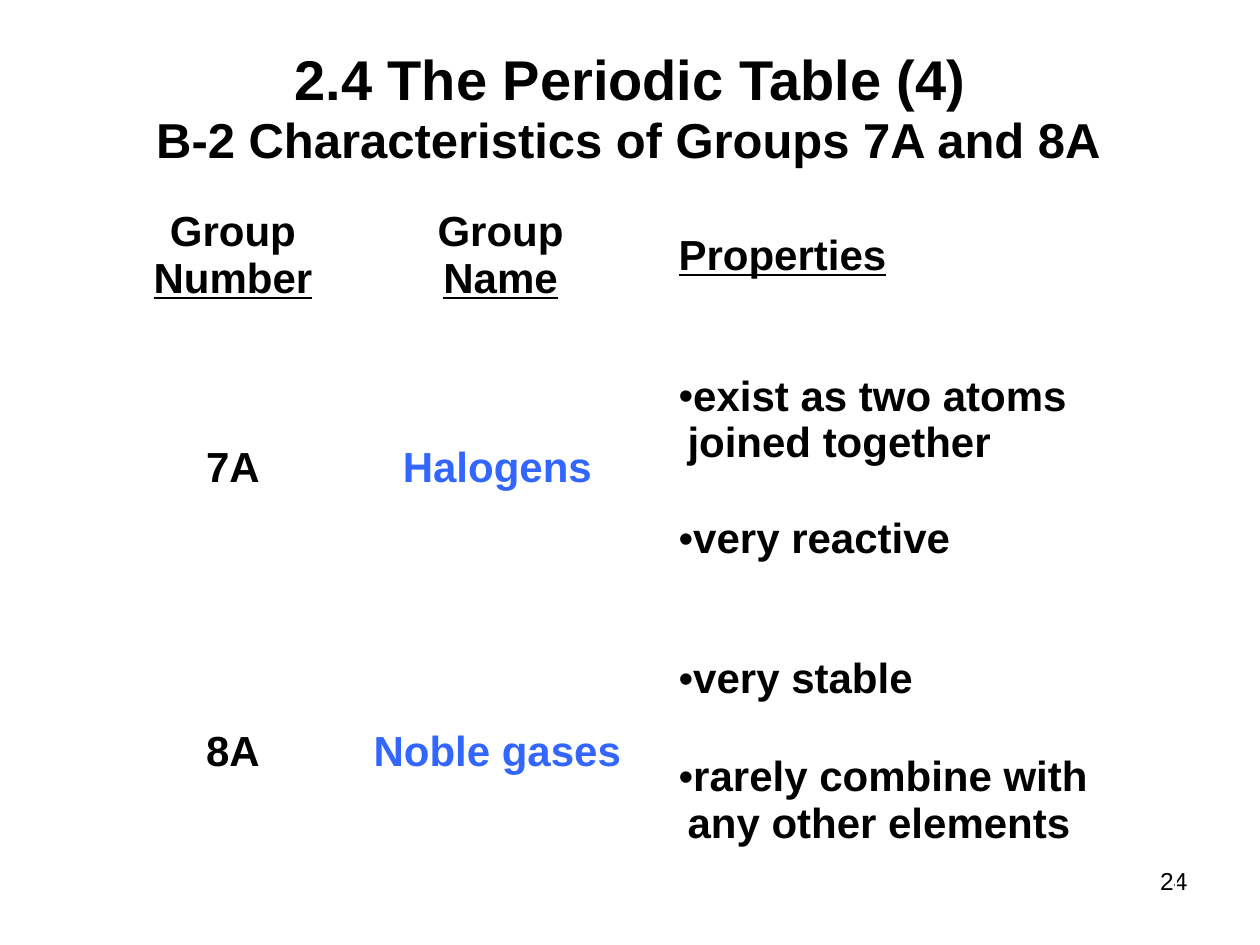
from dataclasses import dataclass

from lxml.etree import SubElement
from pptx import Presentation
from pptx.dml.color import RGBColor
from pptx.enum.text import MSO_ANCHOR, PP_ALIGN
from pptx.oxml.ns import qn
from pptx.util import Cm, Pt


@dataclass(frozen=True)
class Theme:
    font: str = "Arial"
    ink: RGBColor = RGBColor(0x00, 0x00, 0x00)
    accent: RGBColor = RGBColor(0x33, 0x66, 0xFF)
    title: Pt = Pt(32)
    subtitle: Pt = Pt(28)
    table: Pt = Pt(24)
    page: Pt = Pt(14)


THEME = Theme()
COLUMN_WIDTHS = (Cm(4.67), Cm(5.99), Cm(10.69))
ROW_HEIGHTS = (Cm(2.85), Cm(5.7), Cm(5.74))
SIDE_MARGIN = Cm(0.18)
PROPERTY_MARGIN = Cm(0.66)
HANGING_INDENT = Cm(0.18)

HEADINGS = (("Group ", "Number"), ("Group ", "Name"), ("", "Properties"))
GROUPS = (
    ("7A", "Halogens", ("exist as two atoms joined together", "very reactive"), Pt(28)),
    ("8A", "Noble gases", ("very stable", "rarely combine with any other elements"), Pt(29)),
)


def apply_format(target, values):
    for name, value in values.items():
        setattr(target, name, value)


def add_run(paragraph, text, size, color=THEME.ink, bold=True, underline=False):
    run = paragraph.add_run()
    run.text = text
    apply_format(run.font, {"name": THEME.font, "size": size, "bold": bold, "underline": underline})
    run.font.color.rgb = color


def add_label(slide, text, box, size, align, bold=True):
    frame = slide.shapes.add_textbox(*box).text_frame
    apply_format(frame, {"word_wrap": True, "vertical_anchor": MSO_ANCHOR.MIDDLE})
    paragraph = frame.paragraphs[0]
    paragraph.alignment = align
    add_run(paragraph, text, size, bold=bold)


def add_bullet(paragraph):
    properties = paragraph._p.get_or_add_pPr()
    properties.set("marL", str(HANGING_INDENT))
    properties.set("indent", str(-HANGING_INDENT))
    SubElement(properties, qn("a:buFont"), typeface=THEME.font)
    SubElement(properties, qn("a:buChar"), char="•")


def format_cell(cell, left=SIDE_MARGIN, right=SIDE_MARGIN):
    cell.fill.background()
    apply_format(cell, {
        "vertical_anchor": MSO_ANCHOR.MIDDLE,
        "margin_left": left,
        "margin_right": right,
        "margin_top": Cm(0.13),
        "margin_bottom": Cm(0.13),
    })


def fill_heading(cell, plain, underlined, align):
    paragraph = cell.text_frame.paragraphs[0]
    paragraph.alignment = align
    if plain:
        add_run(paragraph, plain, THEME.table)
    add_run(paragraph, underlined, THEME.table, underline=True)


def fill_centered(cell, text, color):
    paragraph = cell.text_frame.paragraphs[0]
    paragraph.alignment = PP_ALIGN.CENTER
    add_run(paragraph, text, THEME.table, color)


def fill_properties(cell, properties, gap):
    frame = cell.text_frame
    for index, text in enumerate(properties):
        paragraph = frame.add_paragraph() if index else frame.paragraphs[0]
        if index < len(properties) - 1:
            paragraph.space_after = gap
        add_bullet(paragraph)
        add_run(paragraph, text, THEME.table)


def add_group_table(slide):
    table = slide.shapes.add_table(
        len(ROW_HEIGHTS), len(COLUMN_WIDTHS), Cm(2.36), Cm(3.73),
        sum(COLUMN_WIDTHS), sum(ROW_HEIGHTS)).table
    apply_format(table, {"first_row": False, "horz_banding": False})
    for column, width in zip(table.columns, COLUMN_WIDTHS):
        column.width = width
    for row, height in zip(table.rows, ROW_HEIGHTS):
        row.height = height
        for cell in row.cells:
            format_cell(cell)
        format_cell(row.cells[2], left=PROPERTY_MARGIN)
    format_cell(table.cell(0, 1), left=Cm(0.64), right=Cm(0.51))

    alignments = (PP_ALIGN.CENTER, PP_ALIGN.CENTER, PP_ALIGN.LEFT)
    for column, (heading, align) in enumerate(zip(HEADINGS, alignments)):
        fill_heading(table.cell(0, column), *heading, align)
    for row, (number, name, properties, gap) in enumerate(GROUPS, start=1):
        fill_centered(table.cell(row, 0), number, THEME.ink)
        fill_centered(table.cell(row, 1), name, THEME.accent)
        fill_properties(table.cell(row, 2), properties, gap)


def main():
    presentation = Presentation()
    apply_format(presentation, {"slide_width": Cm(25.4), "slide_height": Cm(19.05)})
    slide = presentation.slides.add_slide(presentation.slide_layouts[6])
    add_label(slide, "24", (Cm(20.35), Cm(17.32), Cm(3.84), Cm(0.86)),
              THEME.page, PP_ALIGN.RIGHT, bold=False)
    add_label(slide, "2.4 The Periodic Table (4)", (Cm(4.9), Cm(0.89), Cm(15.62), Cm(1.35)),
              THEME.title, PP_ALIGN.CENTER)
    add_label(slide, "B-2 Characteristics of Groups 7A and 8A",
              (Cm(2.9), Cm(2.16), Cm(19.69), Cm(1.3)), THEME.subtitle, PP_ALIGN.LEFT)
    add_group_table(slide)
    presentation.save("out.pptx")


if __name__ == "__main__":
    main()
